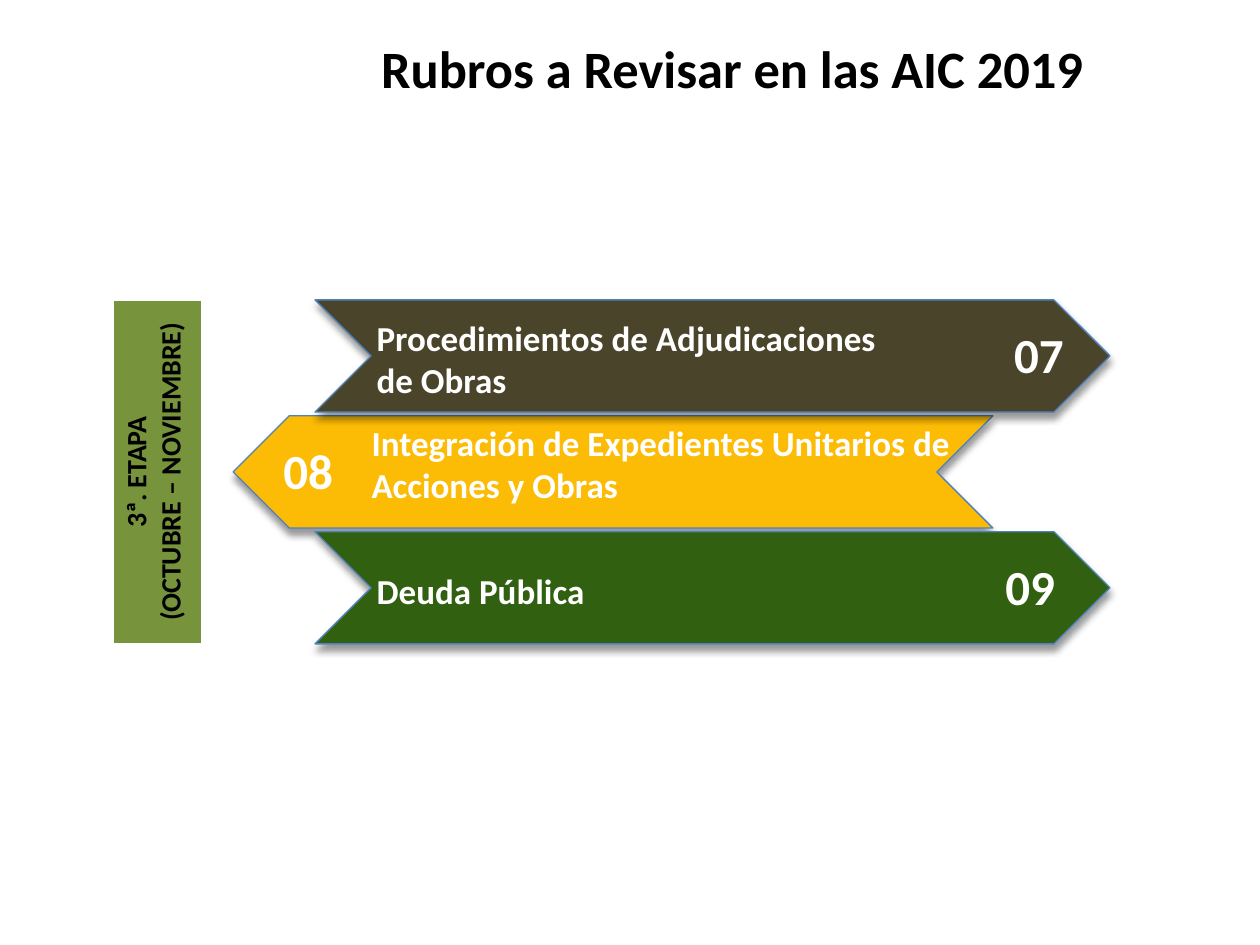
import pptx
import pptx.util
import pptx.dml.color
import pptx.enum.shapes
import pptx.enum.text
from pptx.oxml import parse_xml
from pptx.oxml.ns import nsdecls

In, Pt = pptx.util.Inches, pptx.util.Pt
MID = pptx.enum.text.MSO_ANCHOR.MIDDLE
TOP = pptx.enum.text.MSO_ANCHOR.TOP
LEFT = pptx.enum.text.PP_ALIGN.LEFT
MID_X = pptx.enum.text.PP_ALIGN.CENTER

HUES = {"black": "000000", "white": "FFFFFF", "olive": "77933C", "edge": "4F81BD",
        "brown": "4A452A", "gold": "FCBB04", "green": "306010"}
FONT = "Calibri"
TITLE = "Rubros a Revisar en las AIC 2019"
STAGE = "3ª. ETAPA\n(OCTUBRE – NOVIEMBRE)"

# Back to front: row, fill, turn, left, width, number, number left,
# label, label left, label width, label drop within the row
BANDS = [
    (1, "gold", 180, 1.85, 6.03, "08", 2.04,
     "Integración de Expedientes Unitarios de\nAcciones y Obras", 2.85, 4.92, 0),
    (2, "green", 0, 2.5, 6.31, "09", 7.77, "Deuda Pública", 2.89, 5.62, 0.25),
    (0, "brown", 0, 2.5, 6.31, "07", 7.84,
     "Procedimientos de Adjudicaciones\nde Obras", 2.89, 5.62, 0.08),
]
ROW_TOP, PITCH, BAND_H = 2.38, 0.92, 0.89
NUM_W, NUM_H, NUM_DROP, LINE_H = 0.81, 0.57, 0.15, 0.38

SHADOW = (f'<a:effectLst {nsdecls("a")}><a:outerShdw blurRad="{Pt(4)}" dist="{Pt(3.3)}" '
          'dir="5400000" rotWithShape="0"><a:srgbClr val="000000"><a:alpha val="40000"/>'
          '</a:srgbClr></a:outerShdw></a:effectLst>')


def rgb(name):
    return pptx.dml.color.RGBColor.from_string(HUES[name])


def write(frame, text, size, hue, align):
    frame.text = text
    for para in frame.paragraphs:
        para.alignment = align
        for run in para.runs:
            font = run.font
            font.name, font.size, font.bold = FONT, Pt(size), True
            font.color.rgb = rgb(hue)


def add_text(box, text, size, hue="white", align=MID_X, anchor=TOP, wrap=True):
    frame = slide.shapes.add_textbox(*map(In, box)).text_frame
    frame.word_wrap, frame.vertical_anchor = wrap, anchor
    write(frame, text, size, hue, align)
    return frame


def add_band(box, hue, turn):
    kind = pptx.enum.shapes.MSO_SHAPE.CHEVRON
    band = slide.shapes.add_shape(kind, *map(In, box))
    band.rotation = turn
    band.fill.solid()
    band.fill.fore_color.rgb = rgb(hue)
    band.line.color.rgb = rgb("edge")
    band.line.width = Pt(0.75)
    band._element.spPr.append(parse_xml(SHADOW))


def add_stage(box):
    """One-cell table whose text reads upwards."""
    table = slide.shapes.add_table(1, 1, *map(In, box)).table
    cell = table.cell(0, 0)
    write(cell.text_frame, STAGE, 16, "black", MID_X)
    cell.vertical_anchor = MID
    cell.fill.solid()
    cell.fill.fore_color.rgb = rgb("olive")
    props = cell._tc.get_or_add_tcPr()
    props.set("vert", "vert270")
    for spot, side in enumerate(("lnL", "lnR", "lnT", "lnB")):
        props.insert(spot, parse_xml(
            f'<a:{side} {nsdecls("a")} w="{Pt(1)}"><a:solidFill>'
            f'<a:srgbClr val="{HUES["white"]}"/></a:solidFill></a:{side}>'))


deck = pptx.Presentation()
deck.slide_width, deck.slide_height = In(10), In(7.5)
slide = deck.slides.add_slide(deck.slide_layouts[6])

head = add_text((2.83, 0.27, 5.97, 0.59), TITLE, 30, "black", anchor=MID)
head.paragraphs[0].line_spacing = 0.9
add_stage((0.9, ROW_TOP, 0.7, 2 * PITCH + BAND_H))

for row, hue, turn, left, width, num, num_x, label, text_x, text_w, drop in BANDS:
    top = ROW_TOP + row * PITCH
    add_band((left, top, width, BAND_H), hue, turn)
    lines = label.count("\n") + 1
    add_text((text_x, top + drop, text_w, lines * LINE_H), label, 20,
             align=LEFT, wrap=not turn)
    add_text((num_x, top + NUM_DROP, NUM_W, NUM_H), num, 28)

deck.save("out.pptx")
